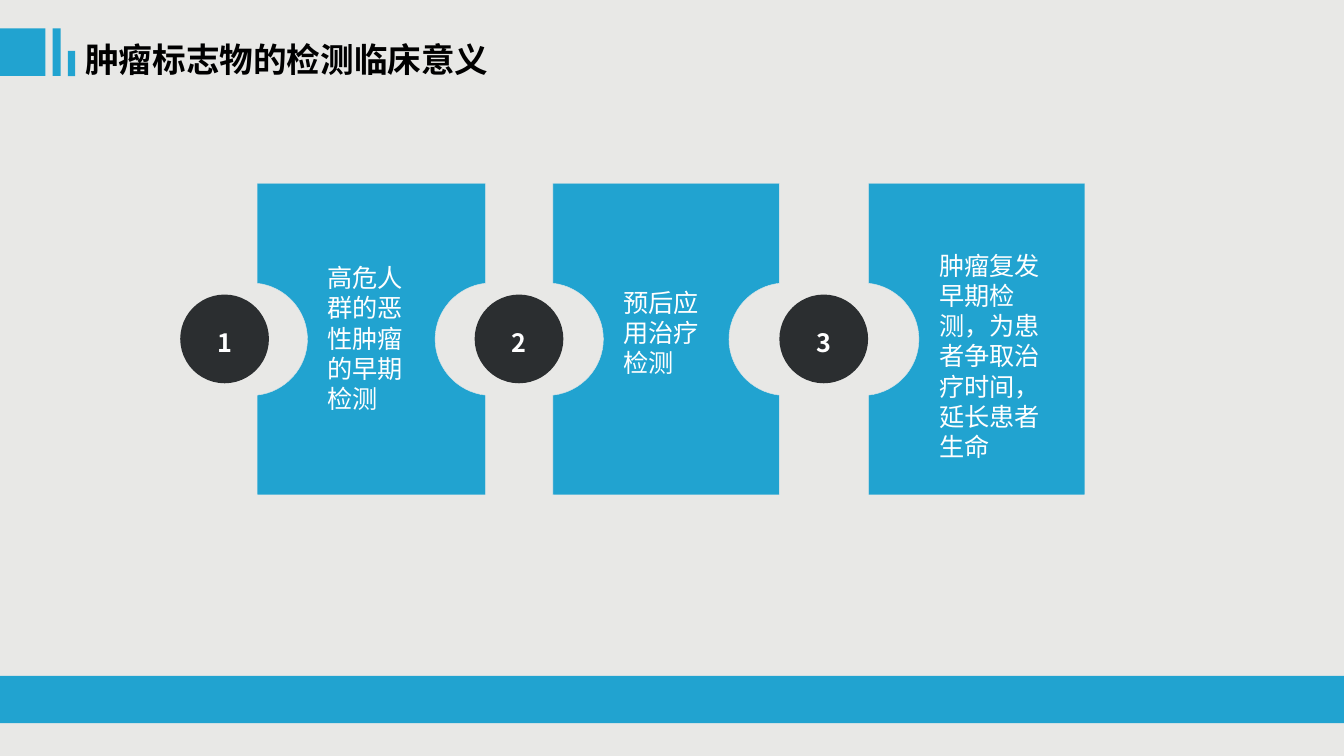
from pptx import Presentation, util as u
from pptx.dml.color import RGBColor
from pptx.enum import shapes, text
from pptx.oxml.ns import qn
from lxml import etree

MODULE = 0.25  # inches: side of one square grid module
COLUMNS, ROWS = 53.32, 30
BLUE, DARK, PAPER, EDGE = "21A3D0", "2B2E30", "E8E8E6", "EAEAEA"
WHITE, BLACK = "FFFFFF", "000000"


def grid(*modules):
    return [u.Inches(m * MODULE) for m in modules]


def color(hex_code):
    return RGBColor.from_string(hex_code)


def write(frame, words, size=18, ink=WHITE, bold=False, align=text.PP_ALIGN.LEFT,
          anchor=text.MSO_ANCHOR.TOP, spacing=None, font="Noto Sans CJK SC"):
    frame.word_wrap = True
    frame.vertical_anchor = anchor
    paragraph = frame.paragraphs[0]
    paragraph.alignment = align
    paragraph.line_spacing = spacing
    # Keep punctuation inside the box
    paragraph._p.get_or_add_pPr().set("hangingPunct", "0")
    run = paragraph.add_run()
    run.text = words
    run.font.size, run.font.bold, run.font.name = u.Pt(size), bold, font
    run.font.color.rgb = color(ink)
    # East Asian typeface
    etree.SubElement(run.font._element, qn("a:ea"), typeface=font)


class Deck:
    # Two Bezier curves, as depth into the card and height from its middle
    notch = [(0, -2.22), (1.12, -2.1), (2, -1.14), (2, 0), (2, 1.14), (1.12, 2.1), (0, 2.22)]

    def __init__(self):
        self.prs = Presentation()
        self.prs.slide_width, self.prs.slide_height = grid(COLUMNS, ROWS)
        self.slide = self.prs.slides.add_slide(self.prs.slide_layouts[5])
        background = self.slide.background.fill
        background.solid()
        background.fore_color.rgb = color(PAPER)

    def paint(self, shape, fill, edge=None):
        shape.shadow.inherit = False
        shape.fill.solid()
        shape.fill.fore_color.rgb = color(fill)
        if edge:
            shape.line.color.rgb = color(edge)
            shape.line.width = u.Pt(0.25)
        else:
            shape.line.fill.background()

    def title(self, words, *box):
        heading = self.slide.shapes.title
        heading.left, heading.top, heading.width, heading.height = grid(*box)
        heading.text_frame.auto_size = text.MSO_AUTO_SIZE.NONE
        write(heading.text_frame, words, size=24, ink=BLACK, bold=True)

    def bar(self, *box):
        bar = self.slide.shapes.add_shape(shapes.MSO_SHAPE.RECTANGLE, *grid(*box))
        self.paint(bar, BLUE)

    def badge(self, words, left, top, size):
        badge = self.slide.shapes.add_shape(shapes.MSO_SHAPE.OVAL, *grid(left, top, size, size))
        self.paint(badge, DARK)
        frame = badge.text_frame
        frame.margin_left = frame.margin_top = frame.margin_right = frame.margin_bottom = 0
        write(frame, words, bold=True, align=text.PP_ALIGN.CENTER,
              anchor=text.MSO_ANCHOR.MIDDLE, spacing=1.2)

    def label(self, words, *box):
        write(self.slide.shapes.add_textbox(*grid(*box)).text_frame, words)

    def card(self, left, top, width, height, right_notch):
        right, bottom, middle = left + width, top + height, top + height / 2
        outline, curve_starts = [(left, top), (right, top)], []

        def cut(edge, inward, points):
            curve_starts.extend([len(outline) + 1, len(outline) + 4])
            outline.extend((edge + inward * depth, middle + rise) for depth, rise in points)

        if right_notch:
            cut(right, -1, self.notch)
        outline += [(right, bottom), (left, bottom)]
        cut(left, 1, self.notch[::-1])

        start, *corners = [grid(*point) for point in outline]
        builder = self.slide.shapes.build_freeform(*start)
        builder.add_line_segments(corners, close=True)
        card = builder.convert_to_shape()
        self.paint(card, BLUE, EDGE)

        # Turn each notch's control points into curves
        steps = list(next(card._element.iter(qn("a:moveTo"))).getparent())
        for first in curve_starts:
            curve = etree.Element(qn("a:cubicBezTo"))
            steps[first].addprevious(curve)
            for step in steps[first:first + 3]:
                curve.append(step[0])
                step.getparent().remove(step)


def main():
    deck = Deck()

    # Heading with its three bars
    for bar in [(0, 1.13, 1.8, 1.88), (2.09, 1.13, 0.32, 1.88), (2.69, 2.02, 0.29, 1)]:
        deck.bar(*bar)
    deck.title("肿瘤标志物的检测临床意义", 2.98, 1.35, 19.92, 2)

    # Meanings: text, card left and width, badge left, text top, width and height
    meanings = [
        ("高危人群的恶性肿瘤的早期检测", 10.2, 9.06, 7.15, 10.22, 4.2, 6.44),
        ("预后应用治疗检测", 21.94, 8.98, 18.83, 11.2, 4.16, 4.04),
        ("肿瘤复发早期检测，为患者争取治疗时间，延长患者生命", 34.46, 8.58, 30.92, 9.72, 5.64, 8.88),
    ]
    for number, (meaning, left, width, badge_left, top, wide, high) in enumerate(meanings, 1):
        deck.card(left, 7.28, width, 12.36, right_notch=number < len(meanings))
        deck.badge(str(number), badge_left, 11.69, 3.52)
        deck.label(meaning, left + 2.4, top, wide, high)

    # Footer band
    deck.bar(0, 26.82, COLUMNS, 1.88)

    deck.prs.save("out.pptx")


if __name__ == "__main__":
    main()
